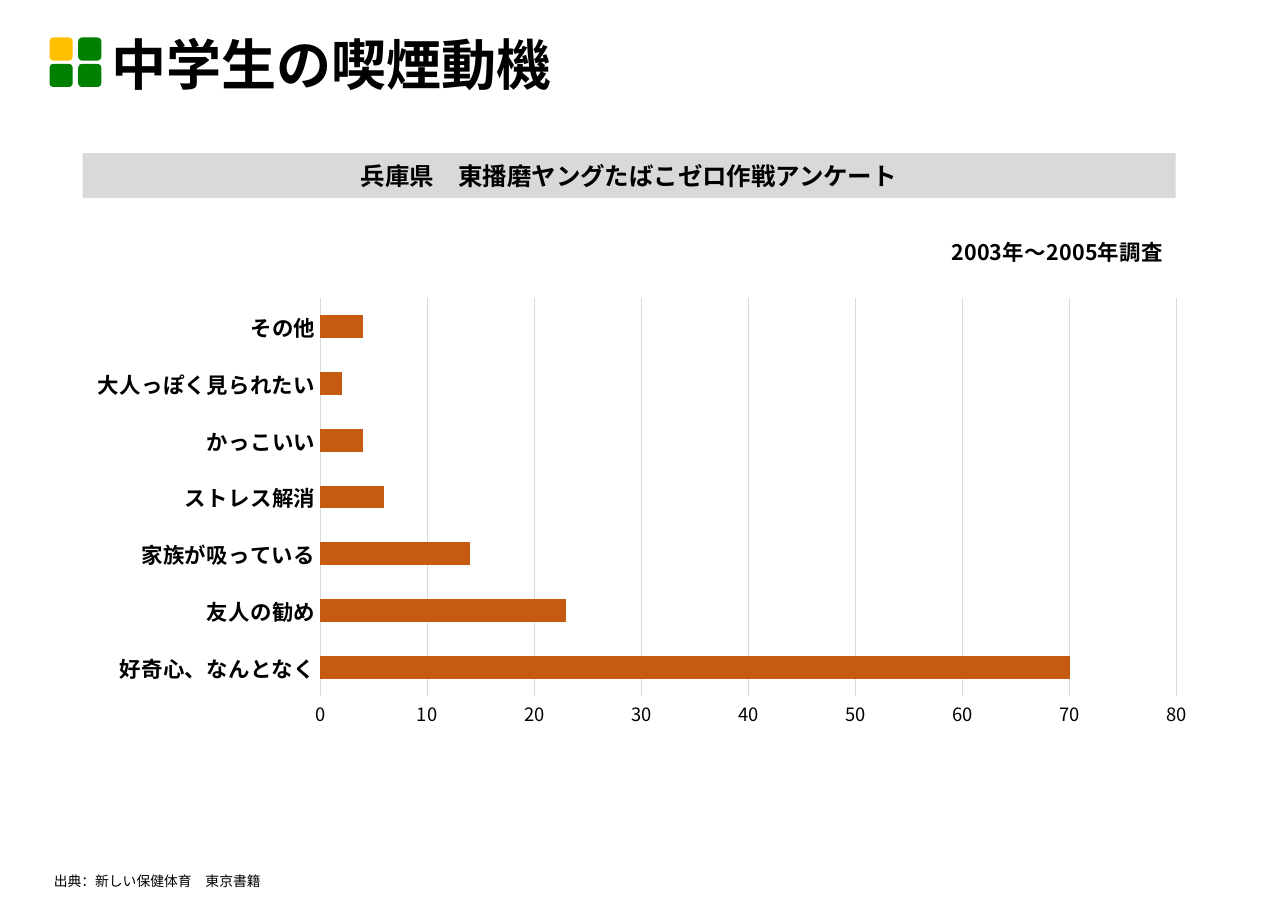
from lxml.etree import SubElement
from pptx import Presentation
from pptx.chart.data import CategoryChartData
from pptx.dml.color import RGBColor
from pptx.enum.chart import XL_CHART_TYPE, XL_TICK_MARK
from pptx.enum.shapes import MSO_SHAPE
from pptx.enum.text import MSO_ANCHOR, MSO_AUTO_SIZE, PP_ALIGN
from pptx.oxml.ns import qn
from pptx.util import Inches, Pt

BLACK = RGBColor(0x00, 0x00, 0x00)
GREY = RGBColor(0xD9, 0xD9, 0xD9)
AMBER = RGBColor(0xFF, 0xC0, 0x00)
GREEN = RGBColor(0x00, 0x80, 0x00)
BROWN = RGBColor(0xC5, 0x5A, 0x11)
GOTHIC = "Noto Sans CJK JP"
LATIN = "Calibri"

MOTIVES = {
    "好奇心、なんとなく": 70,
    "友人の勧め": 23,
    "家族が吸っている": 14,
    "ストレス解消": 6,
    "かっこいい": 4,
    "大人っぽく見られたい": 2,
    "その他": 4,
}


def style_font(font, size, bold=False, name=GOTHIC):
    font.size = Pt(size)
    font.bold = bold
    font.name = name
    font.color.rgb = BLACK


def write_text(frame, text, size, bold=False, name=GOTHIC, align=PP_ALIGN.LEFT, spacing=None):
    para = frame.paragraphs[0]
    para.alignment = align
    para.line_spacing = spacing
    span = para.add_run()
    span.text = text
    style_font(span.font, size, bold, name)
    east_asian = SubElement(span.font._element, qn("a:ea"))
    east_asian.set("typeface", GOTHIC)


def set_layout(element, **values):
    layout = element.get_or_add_layout() if hasattr(element, "get_or_add_layout") else element.find(qn("c:layout"))
    if layout is None:
        layout = element.makeelement(qn("c:layout"))
        element.insert(0, layout)
    for child in list(layout):
        layout.remove(child)
    manual = SubElement(layout, qn("c:manualLayout"))
    for tag, value in values.items():
        SubElement(manual, qn(f"c:{tag}")).set("val", str(value))


class SlideBuilder:
    def __init__(self, deck):
        self.page = deck.slides.add_slide(deck.slide_layouts[5])

    def title(self, text, left, top, width, height):
        box = self.page.shapes.title
        box.left, box.top, box.width, box.height = map(Inches, (left, top, width, height))
        frame = box.text_frame
        frame.auto_size = MSO_AUTO_SIZE.NONE
        frame.vertical_anchor = MSO_ANCHOR.MIDDLE
        write_text(frame, text, 36, bold=True, spacing=0.9)

    def block(self, shapes, kind, left, top, width, height, color):
        box = shapes.add_shape(kind, *map(Inches, (left, top, width, height)))
        box.shadow.inherit = False
        box.fill.solid()
        box.fill.fore_color.rgb = color
        box.line.fill.background()
        return box

    def emblem(self, left, top, size, column_step, row_step):
        group = self.page.shapes.add_group_shape()
        for index in range(4):
            row, column = divmod(index, 2)
            self.block(group.shapes, MSO_SHAPE.ROUNDED_RECTANGLE,
                       left + column * column_step, top + row * row_step,
                       size, size, GREEN if index else AMBER)

    def banner(self, text, left, top, width, height):
        box = self.block(self.page.shapes, MSO_SHAPE.RECTANGLE, left, top, width, height, GREY)
        frame = box.text_frame
        frame.margin_left = frame.margin_right = frame.margin_top = frame.margin_bottom = 0
        frame.vertical_anchor = MSO_ANCHOR.MIDDLE
        write_text(frame, text, 16, bold=True, align=PP_ALIGN.CENTER)

    def source_note(self, text, left, top, width, height):
        box = self.page.shapes.add_textbox(*map(Inches, (left, top, width, height)))
        frame = box.text_frame
        frame.word_wrap = True
        frame.auto_size = MSO_AUTO_SIZE.SHAPE_TO_FIT_TEXT
        write_text(frame, text, 9, name=LATIN)

    def bar_chart(self, heading, values, left, top, width, height):
        data = CategoryChartData()
        data.categories = values.keys()
        data.add_series("Series 1", values.values())
        chart = self.page.shapes.add_chart(
            XL_CHART_TYPE.BAR_CLUSTERED, *map(Inches, (left, top, width, height)), data).chart
        style_font(chart.font, 10)
        chart.has_legend = False
        write_text(chart.chart_title.text_frame, heading, 14, bold=True)
        title_element = chart.chart_title._element
        title_layout = title_element.find(qn("c:layout"))
        if title_layout is None:
            title_layout = title_element.makeelement(qn("c:layout"))
            title_element.find(qn("c:tx")).addnext(title_layout)
        set_layout(title_element, xMode="edge", yMode="edge", x=0.78, y=0.02)
        plot_area = chart._chartSpace.chart.plotArea
        set_layout(plot_area, layoutTarget="inner", xMode="edge", yMode="edge",
                   x=0.235, y=0.138, w=0.744, h=0.673)

        plot = chart.plots[0]
        plot.gap_width = 150
        plot.vary_by_categories = False
        bars = plot.series[0].format.fill
        bars.solid()
        bars.fore_color.rgb = BROWN

        motives, scale = chart.category_axis, chart.value_axis
        for axis in (motives, scale):
            axis.major_tick_mark = axis.minor_tick_mark = XL_TICK_MARK.NONE
        style_font(motives.tick_labels.font, 14, bold=True)
        style_font(scale.tick_labels.font, 12)
        scale.minimum_scale, scale.maximum_scale, scale.major_unit = 0, 80, 10
        scale.format.line.fill.background()
        for line in (motives.format.line, scale.major_gridlines.format.line):
            line.color.rgb = GREY
            line.width = Pt(0.75)


def main():
    deck = Presentation()
    deck.slide_width, deck.slide_height = Inches(11.69), Inches(8.27)
    slide = SlideBuilder(deck)
    slide.bar_chart("2003年～2005年調査", MOTIVES, 0.45, 1.97, 10.45, 5.36)
    slide.source_note("出典：新しい保健体育　東京書籍", 0.39, 7.87, 5.78, 0.25)
    slide.emblem(0.45, 0.34, 0.21, 0.26, 0.24)
    slide.title("中学生の喫煙動機", 0.91, 0.27, 9.92, 0.68)
    slide.banner("兵庫県　東播磨ヤングたばこゼロ作戦アンケート", 0.75, 1.39, 9.92, 0.41)
    deck.save("out.pptx")


if __name__ == "__main__":
    main()
